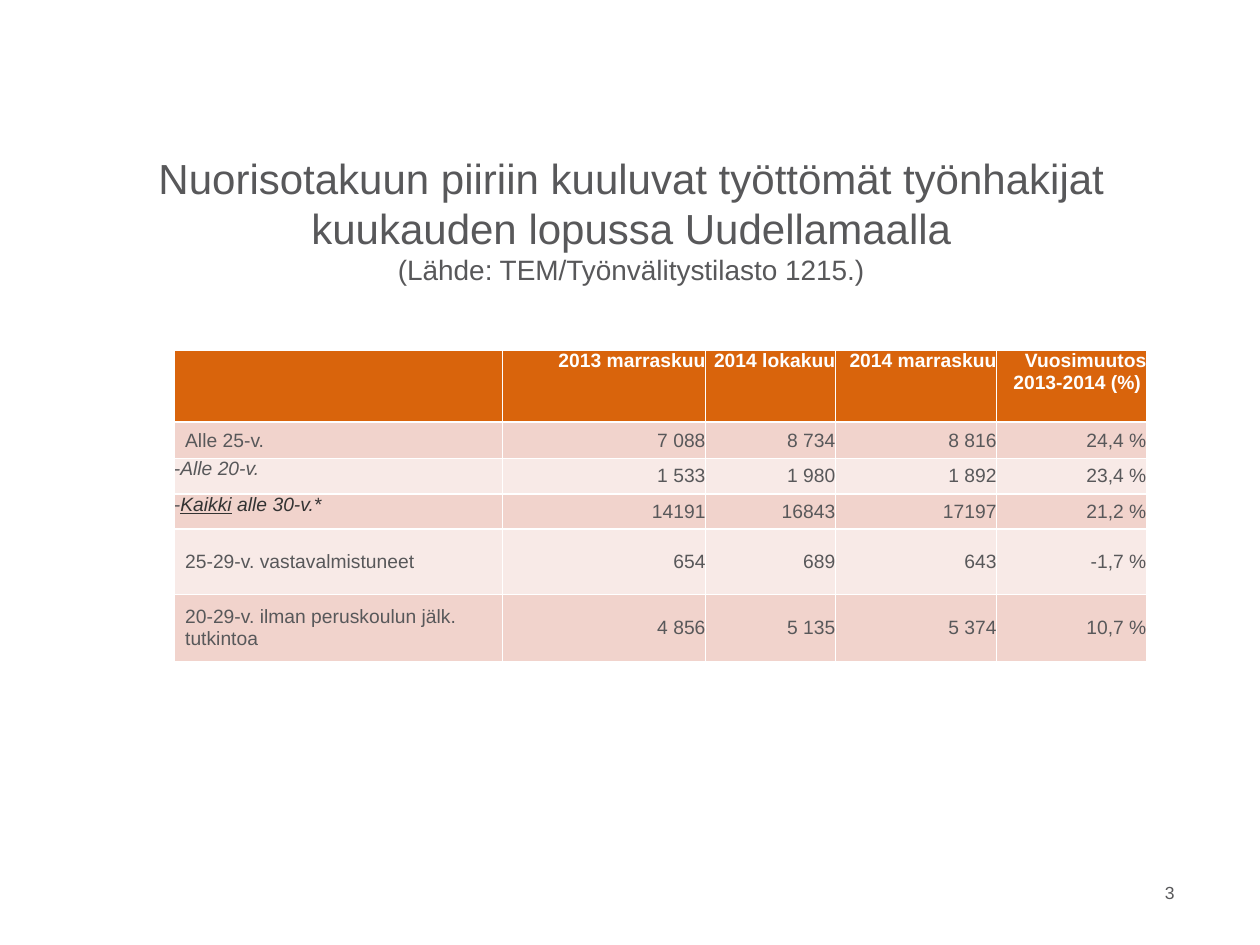
import pptx
import pptx.dml.color
import pptx.enum.text
import pptx.oxml
import pptx.oxml.ns
import pptx.util
from pptx.util import Inches

COLORS = {
    "text": "58585A",
    "strong": "333333",
    "white": "FFFFFF",
    "header": "D9640C",
    "odd": "F1D3CC",
    "even": "F8EAE7",
}
ALIGN = pptx.enum.text.PP_ALIGN
ANCHOR = pptx.enum.text.MSO_ANCHOR
COLUMN_WIDTHS = [2.61, 1.61, 1.03, 1.28, 1.19]
ROW_HEIGHTS = [0.57, 0.29, 0.28, 0.28, 0.52, 0.53]
ROWS = [
    ["", "2013 marraskuu", "2014 lokakuu", "2014 marraskuu", "Vuosimuutos 2013-2014 (%) "],
    ["Alle 25-v.", "7 088", "8 734", "8 816", "24,4 %"],
    ["-Alle 20-v.", "1 533", "1 980", "1 892", "23,4 %"],
    ["-Kaikki alle 30-v.*", "14191", "16843", "17197", "21,2 %"],
    ["25-29-v. vastavalmistuneet", "654", "689", "643", "-1,7 %"],
    ["20-29-v. ilman peruskoulun jälk. tutkintoa", "4 856", "5 135", "5 374", "10,7 %"],
]


def color(name):
    return pptx.dml.color.RGBColor.from_string(COLORS[name])


def style(para, size, name="text", align=ALIGN.LEFT, bold=False, italic=False):
    para.alignment = align
    para.font.name = "Arial"
    para.font.size = pptx.util.Pt(size)
    para.font.color.rgb = color(name)
    para.font.bold = bold
    para.font.italic = italic


def add_text_box(page, left, top, width, height):
    box = page.shapes.add_textbox(Inches(left), Inches(top), Inches(width), Inches(height))
    box.text_frame.word_wrap = True
    return box.text_frame


def add_title(page, left, top, width, height):
    frame = add_text_box(page, left, top, width, height)
    frame.vertical_anchor = ANCHOR.MIDDLE
    para = frame.paragraphs[0]
    para.add_run().text = "Nuorisotakuun piiriin kuuluvat työttömät työnhakijat kuukauden lopussa Uudellamaalla"
    para.add_line_break()
    source = para.add_run()
    source.text = "(Lähde: TEM/Työnvälitystilasto 1215.)"
    style(para, 24, align=ALIGN.CENTER)
    source.font.size = pptx.util.Pt(16)


def add_page_number(page, left, top, width, height):
    para = add_text_box(page, left, top, width, height).paragraphs[0]
    para.text = "3"
    style(para, 10, align=ALIGN.RIGHT)


def set_borders(cell, top, bottom):
    properties = cell._tc.get_or_add_tcPr()
    widths = {"lnL": 1, "lnR": 1, "lnT": top, "lnB": bottom}
    for position, (side, width) in enumerate(widths.items()):
        line = pptx.oxml.parse_xml(
            f'<a:{side} {pptx.oxml.ns.nsdecls("a")} w="{pptx.util.Pt(width)}">'
            f'<a:solidFill><a:srgbClr val="{COLORS["white"]}"/></a:solidFill></a:{side}>'
        )
        properties.insert(position, line)


def fill_cell(cell, text, row, column):
    header = row == 0
    label = column == 0
    subgroup = label and text.startswith("-")
    indented = label and not header and not subgroup
    cell.margin_left = Inches(0.09 if indented else 0)
    cell.margin_top = cell.margin_right = cell.margin_bottom = 0
    cell.vertical_anchor = ANCHOR.TOP if header or subgroup else ANCHOR.MIDDLE
    cell.fill.solid()
    cell.fill.fore_color.rgb = color("header" if header else "odd" if row % 2 else "even")
    set_borders(cell, 1.5 if row == 1 else 1, 1.5 if header else 1)
    para = cell.text_frame.paragraphs[0]
    before, word, after = text.partition("Kaikki")
    for part in filter(None, (before, word, after)):
        span = para.add_run()
        span.text = part
        if word and part != before:
            span.font.color.rgb = color("strong")
            span.font.underline = part == word
    style(para, 11, "white" if header else "text",
          ALIGN.LEFT if label else ALIGN.RIGHT, header, subgroup)


def add_statistics(page, left, top):
    table = page.shapes.add_table(
        len(ROWS), len(COLUMN_WIDTHS), Inches(left), Inches(top),
        Inches(sum(COLUMN_WIDTHS)), Inches(sum(ROW_HEIGHTS)),
    ).table
    for column, width in zip(table.columns, COLUMN_WIDTHS):
        column.width = Inches(width)
    for row, height in zip(table.rows, ROW_HEIGHTS):
        row.height = Inches(height)
    for row, texts in enumerate(ROWS):
        for column, text in enumerate(texts):
            fill_cell(table.cell(row, column), text, row, column)


def main():
    deck = pptx.Presentation()
    deck.slide_width = Inches(10)
    deck.slide_height = Inches(7.5)
    page = deck.slides.add_slide(deck.slide_layouts[6])
    add_title(page, 0.51, 1.39, 9, 0.7)
    add_page_number(page, 8.98, 6.95, 0.44, 0.4)
    add_statistics(page, 1.38, 2.78)
    deck.save("out.pptx")


if __name__ == "__main__":
    main()
